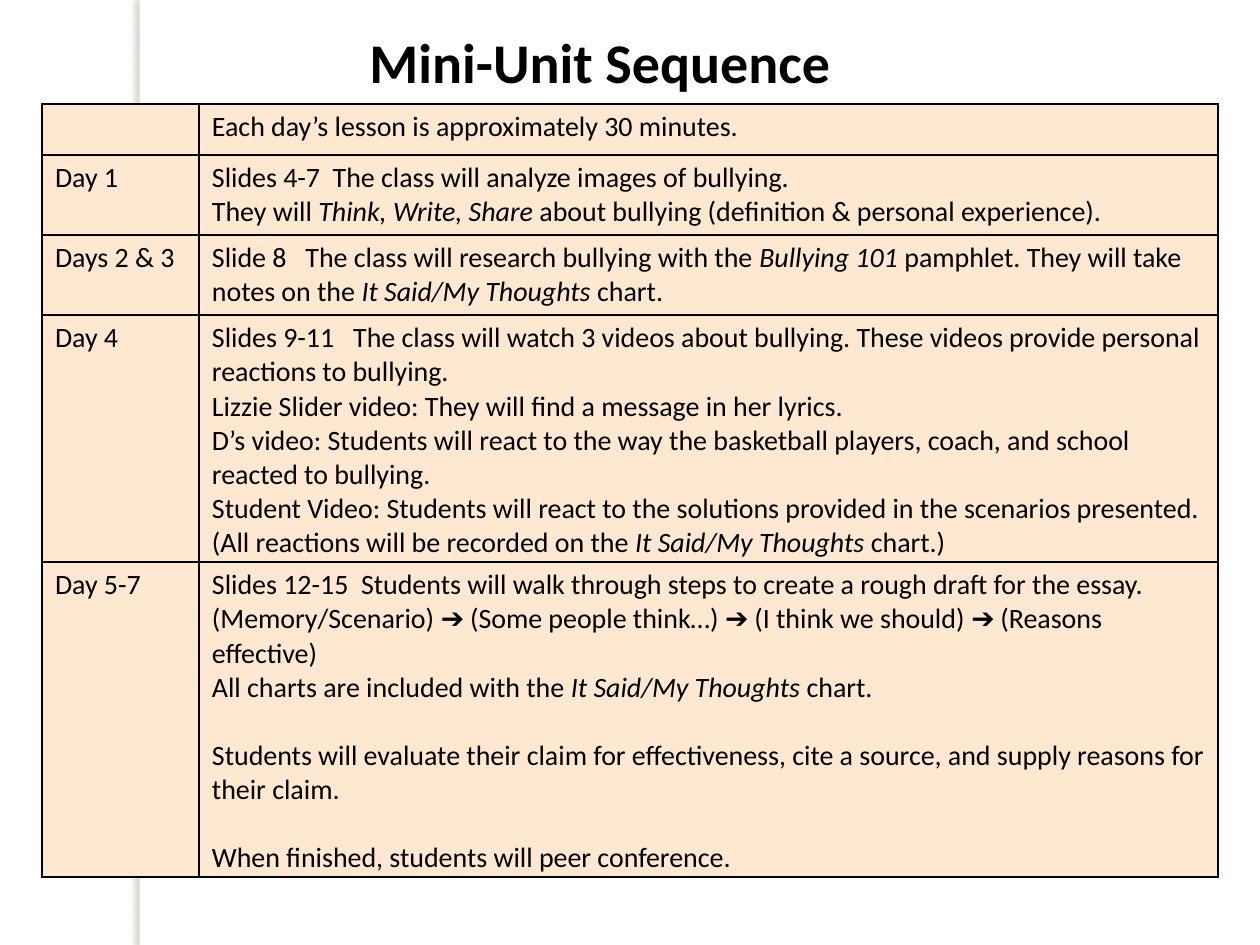
from dataclasses import dataclass

from lxml.etree import SubElement
from pptx import Presentation
from pptx.dml.color import RGBColor
from pptx.enum.shapes import MSO_SHAPE
from pptx.oxml import parse_xml
from pptx.oxml.ns import nsdecls, qn
from pptx.util import Emu, Pt

SCALE = 914400 / 126
FONT = "Calibri"
INK = "000000"
PEACH = "FFE8D1"
LINE = 34


@dataclass
class Para:
    text: str
    gap: int = 0


@dataclass
class Row:
    height: int
    day: str
    plan: list[Para]


ROWS = [
    Row(51, "", [Para("Each day’s lesson is approximately 30 minutes.")]),
    Row(80, "Day 1", [
        Para("Slides 4-7  The class will analyze images of bullying."),
        Para("They will *Think, Write, Share* about bullying (definition & personal experience)."),
    ]),
    Row(80, "Days 2 & 3", [
        Para("Slide 8   The class will research bullying with the *Bullying 101 *pamphlet. "
             "They will take notes on the *It Said/My Thoughts* chart."),
    ]),
    Row(247, "Day 4", [
        Para("Slides 9-11   The class will watch 3 videos about bullying. "
             "These videos provide personal reactions to bullying."),
        Para("Lizzie Slider video: They will find a message in her lyrics."),
        Para("D’s video: Students will react to the way the basketball players, coach, "
             "and school reacted to bullying."),
        Para("Student Video: Students will react to the solutions provided in the scenarios presented."),
        Para("(All reactions will be recorded on the *It Said/My Thoughts* chart.)"),
    ]),
    Row(315, "Day 5-7", [
        Para("Slides 12-15  Students will walk through steps to create a rough draft for the essay."),
        Para("(Memory/Scenario) ➔ (Some people think…) ➔ (I think we should) ➔ (Reasons effective)"),
        Para("All charts are included with the *It Said/My Thoughts* chart."),
        Para("Students will evaluate their claim for effectiveness, cite a source, "
             "and supply reasons for their claim.", LINE),
        Para("When finished, students will peer conference.", LINE),
    ]),
]


def px(n: int) -> Emu:
    return Emu(round(n * SCALE))


def color(code: str) -> RGBColor:
    return RGBColor.from_string(code)


def write(frame, paras: list[Para], size: int, bold: bool = False) -> None:
    for i, para in enumerate(paras):
        line = frame.add_paragraph() if i else frame.paragraphs[0]
        line.space_before = px(para.gap)
        for j, part in enumerate(para.text.split("*")):
            if not part:
                continue
            run = line.add_run()
            run.text = part
            font = run.font
            font.name, font.size = FONT, Pt(size)
            font.bold, font.italic = bold, j % 2 == 1
            font.color.rgb = color(INK)


def border(cell) -> None:
    props = cell._tc.get_or_add_tcPr()
    for i, side in enumerate(("lnL", "lnR", "lnT", "lnB")):
        props.insert(i, parse_xml(
            f'<a:{side} {nsdecls("a")} w="{Pt(1)}"><a:solidFill>'
            f'<a:srgbClr val="{INK}"/></a:solidFill></a:{side}>'))


def draw_cell(cell, paras: list[Para]) -> None:
    cell.margin_left = cell.margin_right = px(13)
    cell.margin_top, cell.margin_bottom = px(6), px(1)
    cell.fill.solid()
    cell.fill.fore_color.rgb = color(PEACH)
    border(cell)
    write(cell.text_frame, paras, 16)


def draw_strip(slide) -> None:
    strip = slide.shapes.add_shape(MSO_SHAPE.RECTANGLE, px(140), 0, px(10), px(945))
    strip.fill.solid()
    strip.fill.fore_color.rgb = color("FFFFFF")
    strip.line.fill.background()
    strip.shadow.inherit = False
    glow = SubElement(strip._element.spPr.find(qn("a:effectLst")), qn("a:outerShdw"),
                      blurRad=str(Pt(3)), dist=str(Pt(3)), dir="10800000")
    tint = SubElement(glow, qn("a:srgbClr"), val="736F63")
    SubElement(tint, qn("a:alpha"), val="25000")


def draw_title(slide) -> None:
    box = slide.shapes.add_textbox(px(357), px(21), px(787), px(81))
    box.text_frame.word_wrap = True
    write(box.text_frame, [Para("Mini-Unit Sequence")], 32, True)


def draw_table(slide, rows: list[Row]) -> None:
    widths = 157, 1019
    total = sum(row.height for row in rows)
    table = slide.shapes.add_table(
        len(rows), len(widths), px(42), px(104), px(sum(widths)), px(total)).table
    table.first_row = table.horz_banding = False
    for col, width in zip(table.columns, widths):
        col.width = px(width)
    for i, row in enumerate(rows):
        table.rows[i].height = px(row.height)
        draw_cell(table.cell(i, 0), [Para(row.day)])
        draw_cell(table.cell(i, 1), row.plan)


def main() -> None:
    deck = Presentation()
    deck.slide_width, deck.slide_height = px(1260), px(945)
    slide = deck.slides.add_slide(deck.slide_layouts[6])
    draw_strip(slide)
    draw_title(slide)
    draw_table(slide, ROWS)
    deck.save("out.pptx")


if __name__ == "__main__":
    main()
